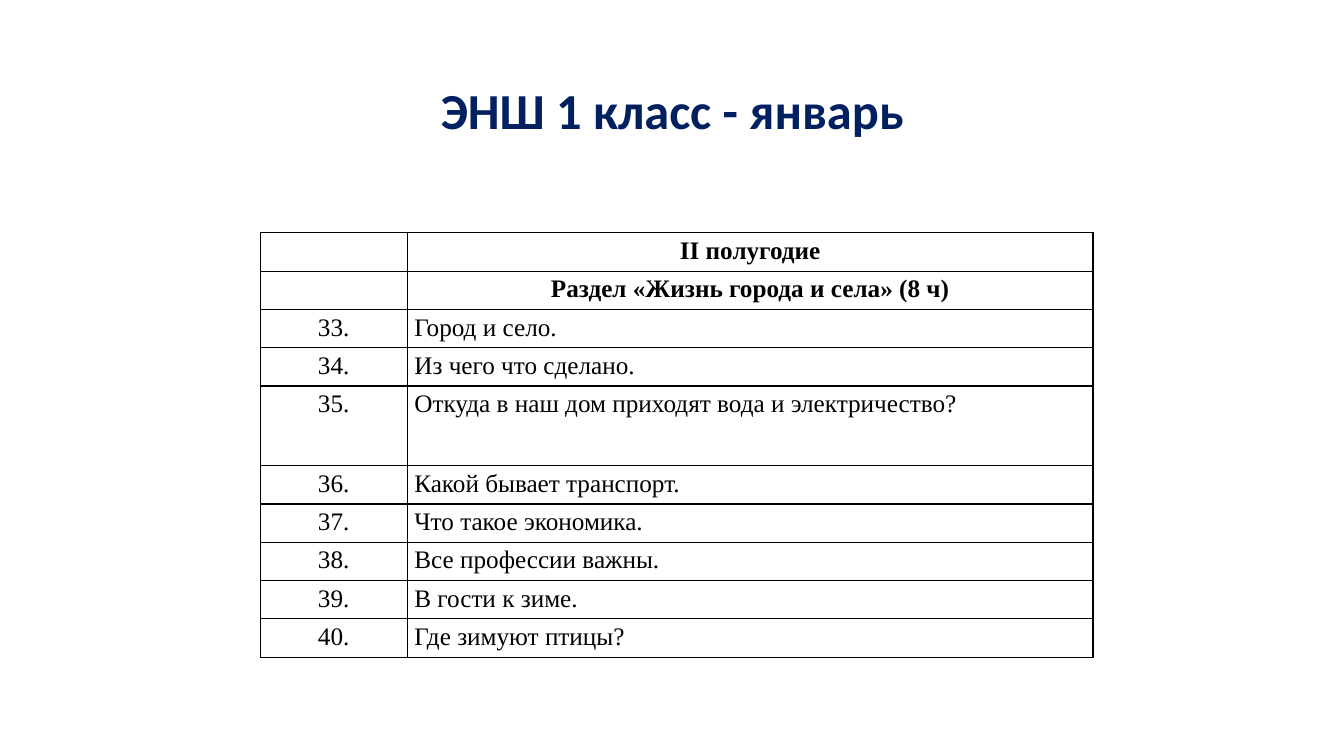
"""Build the January lesson plan slide for the first grade."""
from typing import NamedTuple

from lxml import etree
from pptx import Presentation
from pptx.dml.color import RGBColor
from pptx.enum.text import MSO_ANCHOR, PP_ALIGN
from pptx.oxml.ns import qn
from pptx.slide import Slide
from pptx.table import _Cell
from pptx.text.text import TextFrame
from pptx.util import Inches, Pt

CENTER = PP_ALIGN.CENTER
LEFT = PP_ALIGN.LEFT
MIDDLE = MSO_ANCHOR.MIDDLE

COLORS = {"title": "002060", "text": "000000", "border": "000000"}
BORDER_WIDTH = Pt(1)
COLUMN_WIDTHS = (1.46, 6.8)
ROW_HEIGHT = 0.38
TALL_ROW_HEIGHT = 0.79
FIRST_LESSON = 33


class Row(NamedTuple):
    number: str
    topic: str
    heading: bool = False
    height: float = ROW_HEIGHT


HEADINGS = ("II полугодие", "Раздел «Жизнь города и села» (8 ч)")
TALL_LESSON = "Откуда в наш дом приходят вода и электричество?"
LESSONS = (
    "Город и село.",
    "Из чего что сделано.",
    TALL_LESSON,
    "Какой бывает транспорт.",
    "Что такое экономика.",
    "Все профессии важны.",
    "В гости к зиме.",
    "Где зимуют птицы?",
)
ROWS = [Row("", heading, heading=True) for heading in HEADINGS] + [
    Row(f"{number}.", topic, height=TALL_ROW_HEIGHT if topic == TALL_LESSON else ROW_HEIGHT)
    for number, topic in enumerate(LESSONS, FIRST_LESSON)
]


def write_text(frame: TextFrame, text: str, *, font: str = "Times New Roman",
               size: float = 18, color: str = "text", bold: bool = False,
               align: PP_ALIGN = LEFT, line_spacing: float = 1.15) -> None:
    paragraph = frame.paragraphs[0]
    paragraph.alignment = align
    paragraph.line_spacing = line_spacing
    run = paragraph.add_run()
    run.text = text
    run.font.name = font
    run.font.size = Pt(size)
    run.font.bold = bold
    run.font.color.rgb = RGBColor.from_string(COLORS[color])


def format_cell(cell: _Cell) -> None:
    cell.margin_left = cell.margin_right = Inches(0.07)
    cell.margin_top = cell.margin_bottom = 0
    properties = cell._tc.get_or_add_tcPr()
    for side in ("a:lnL", "a:lnR", "a:lnT", "a:lnB"):
        line = etree.SubElement(properties, qn(side), w=str(BORDER_WIDTH))
        fill = etree.SubElement(line, qn("a:solidFill"))
        etree.SubElement(fill, qn("a:srgbClr"), val=COLORS["border"])
    cell.fill.background()


def add_title(slide: Slide) -> None:
    title = slide.shapes.add_textbox(Inches(0.92), Inches(0.4), Inches(11.5), Inches(1.45))
    title.text_frame.word_wrap = True
    title.text_frame.vertical_anchor = MIDDLE
    write_text(title.text_frame, "ЭНШ 1 класс - январь", font="Calibri", size=36,
               color="title", bold=True, align=CENTER, line_spacing=0.9)


def add_lesson_table(slide: Slide) -> None:
    table = slide.shapes.add_table(
        len(ROWS), len(COLUMN_WIDTHS), Inches(2.58), Inches(2.31),
        Inches(sum(COLUMN_WIDTHS)), Inches(sum(row.height for row in ROWS))).table
    table.first_row = False
    table.horz_banding = False
    for column, width in zip(table.columns, COLUMN_WIDTHS):
        column.width = Inches(width)
    for index, row in enumerate(ROWS):
        table.rows[index].height = Inches(row.height)
        number_cell, topic_cell = table.rows[index].cells
        format_cell(number_cell)
        format_cell(topic_cell)
        if row.number:
            write_text(number_cell.text_frame, row.number, align=CENTER)
        write_text(topic_cell.text_frame, row.topic, bold=row.heading,
                   align=CENTER if row.heading else LEFT)


def main() -> None:
    presentation = Presentation()
    presentation.slide_width = Inches(13.33)
    presentation.slide_height = Inches(7.5)
    slide = presentation.slides.add_slide(presentation.slide_layouts[6])
    add_title(slide)
    add_lesson_table(slide)
    presentation.save("out.pptx")


if __name__ == "__main__":
    main()
